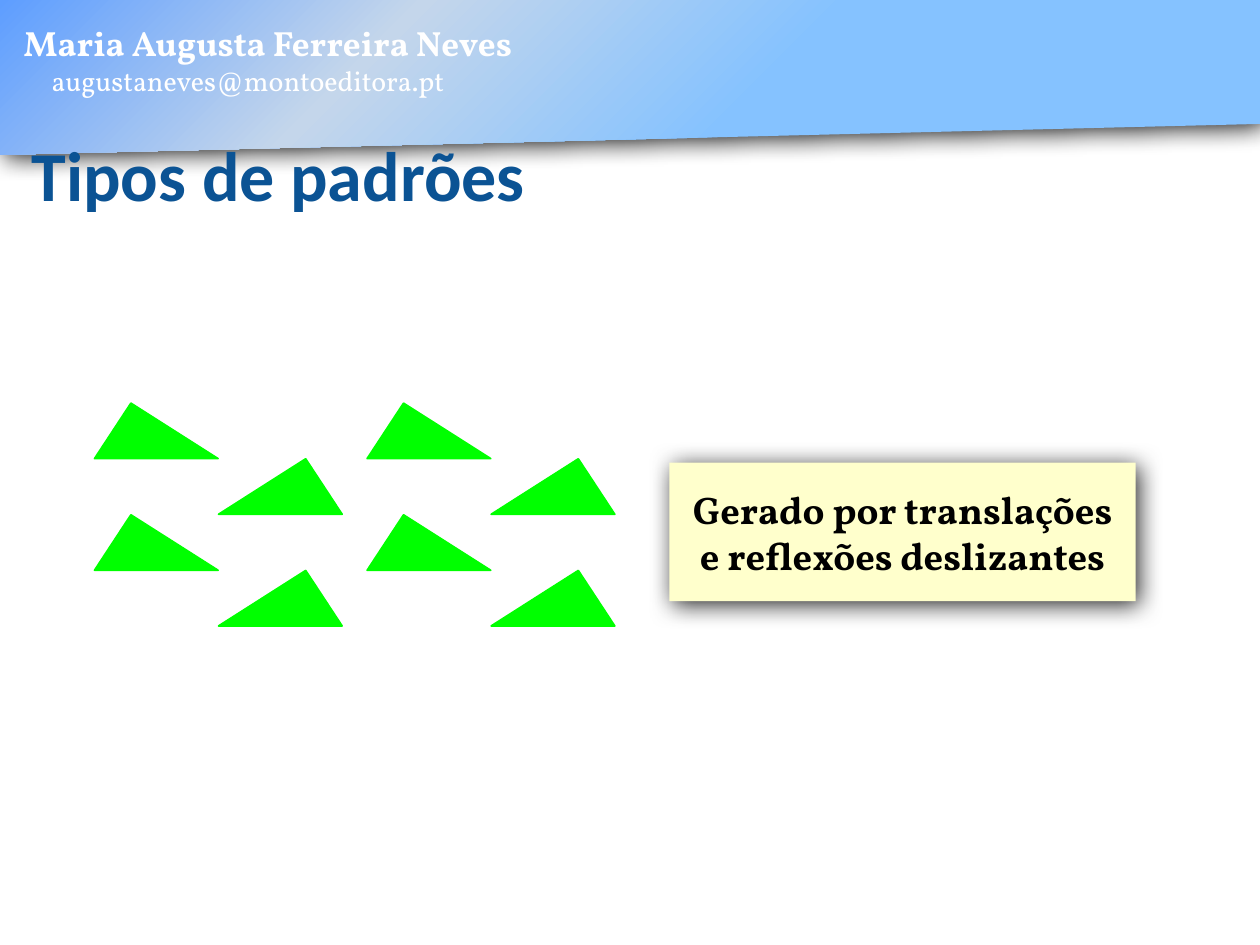
from lxml import etree
from pptx import Presentation
from pptx.dml.color import RGBColor
from pptx.enum.shapes import MSO_SHAPE
from pptx.enum.text import MSO_ANCHOR, PP_ALIGN
from pptx.oxml.ns import qn
from pptx.util import Pt

BANNER = MSO_SHAPE.FLOWCHART_MANUAL_INPUT
TRIANGLE = MSO_SHAPE.ISOSCELES_TRIANGLE
RECTANGLE = MSO_SHAPE.RECTANGLE
LEFT, CENTER = PP_ALIGN.LEFT, PP_ALIGN.CENTER
TOP, MIDDLE, BOTTOM = MSO_ANCHOR.TOP, MSO_ANCHOR.MIDDLE, MSO_ANCHOR.BOTTOM

COLORS = {
    "white": "FFFFFF",
    "black": "000000",
    "title": "0B5394",
    "triangle": "00FF00",
    "note": "FFFFCC",
    "banner": "85C2FF",
    "banner_pale": "C4D6EB",
    "banner_deep": "5E9EFF",
}


def write(frame, text, *, size, color, font="Vollkorn", bold=True,
          align=LEFT, anchor=TOP, indent=0):
    """Add a paragraph to the frame, filling the first one if it is empty."""
    frame.word_wrap = True
    frame.vertical_anchor = anchor
    paragraph = frame.paragraphs[0] if not frame.text else frame.add_paragraph()
    paragraph.alignment = align
    if indent:
        paragraph._p.get_or_add_pPr().set("indent", str(Pt(indent)))
    run = paragraph.add_run()
    run.text = text
    run.font.name = font
    run.font.size = Pt(size)
    run.font.bold = bold
    run.font.color.rgb = RGBColor.from_string(COLORS[color])


def add_soft_shadow(shape):
    effects = etree.SubElement(shape._element.spPr, qn("a:effectLst"))
    shadow = etree.SubElement(
        effects, qn("a:outerShdw"), blurRad=str(Pt(14)), dist=str(Pt(3)),
        dir="2700000", algn="tl", rotWithShape="0")
    black = etree.SubElement(shadow, qn("a:srgbClr"), val=COLORS["black"])
    etree.SubElement(black, qn("a:alpha"), val="84000")


prs = Presentation()
prs.slide_width, prs.slide_height = Pt(720), Pt(540)
slide = prs.slides.add_slide(prs.slide_layouts[6])
shapes = slide.shapes

# Banner: turned upside down so that its slanted edge is at the bottom
banner = shapes.add_shape(BANNER, Pt(0), Pt(0), Pt(720), Pt(88.5))
banner.rotation = 180
banner.line.fill.background()
gradient = etree.SubElement(banner._element.spPr, qn("a:gradFill"), rotWithShape="1")
stops = etree.SubElement(gradient, qn("a:gsLst"))
for position, name in ((0, "banner"), (40, "banner"), (70, "banner_pale"), (100, "banner_deep")):
    stop = etree.SubElement(stops, qn("a:gs"), pos=str(position * 1000))
    etree.SubElement(stop, qn("a:srgbClr"), val=COLORS[name])
etree.SubElement(gradient, qn("a:lin"), ang="2700000", scaled="0")
banner._element.spPr.find(qn("a:ln")).addprevious(gradient)
add_soft_shadow(banner)

author = shapes.add_textbox(Pt(6.5), Pt(8.6), Pt(523.4), Pt(51)).text_frame
write(author, "Maria Augusta Ferreira Neves", size=20, color="white")
write(author, "augustaneves@montoeditora.pt", size=16, color="white", bold=False, indent=16)

# Pattern: each triangle is followed by its mirror image, one step right and down
WIDTH, HEIGHT, APEX = 70.6, 31.7, 0.295
STEP_X, STEP_Y = 70.9, 31.8
PAIR_GAP_X, PAIR_GAP_Y = 155.8, 63.8
for column in range(2):
    for row in range(2):
        for mirrored in range(2):
            triangle = shapes.add_shape(
                TRIANGLE,
                Pt(54 + column * PAIR_GAP_X + mirrored * STEP_X),
                Pt(230.4 + row * PAIR_GAP_Y + mirrored * STEP_Y),
                Pt(WIDTH), Pt(HEIGHT))
            triangle.adjustments[0] = 1 - APEX if mirrored else APEX
            triangle.shadow.inherit = False
            triangle.fill.solid()
            triangle.fill.fore_color.rgb = RGBColor.from_string(COLORS["triangle"])
            triangle.line.color.rgb = RGBColor.from_string(COLORS["triangle"])
            triangle.line.width = Pt(1)

note = shapes.add_shape(RECTANGLE, Pt(382.6), Pt(264.4), Pt(266.4), Pt(79.2))
note.fill.solid()
note.fill.fore_color.rgb = RGBColor.from_string(COLORS["note"])
note.line.fill.background()
add_soft_shadow(note)
write(note.text_frame, "Gerado por translações e reflexões deslizantes",
      size=22, color="black", align=CENTER, anchor=MIDDLE)

title = shapes.add_textbox(Pt(18), Pt(67.7), Pt(563), Pt(55.4)).text_frame
title.margin_left = title.margin_right = title.margin_bottom = 0
write(title, "Tipos de padrões", size=40, color="title", font="Calibri", anchor=BOTTOM)

prs.save("out.pptx")
